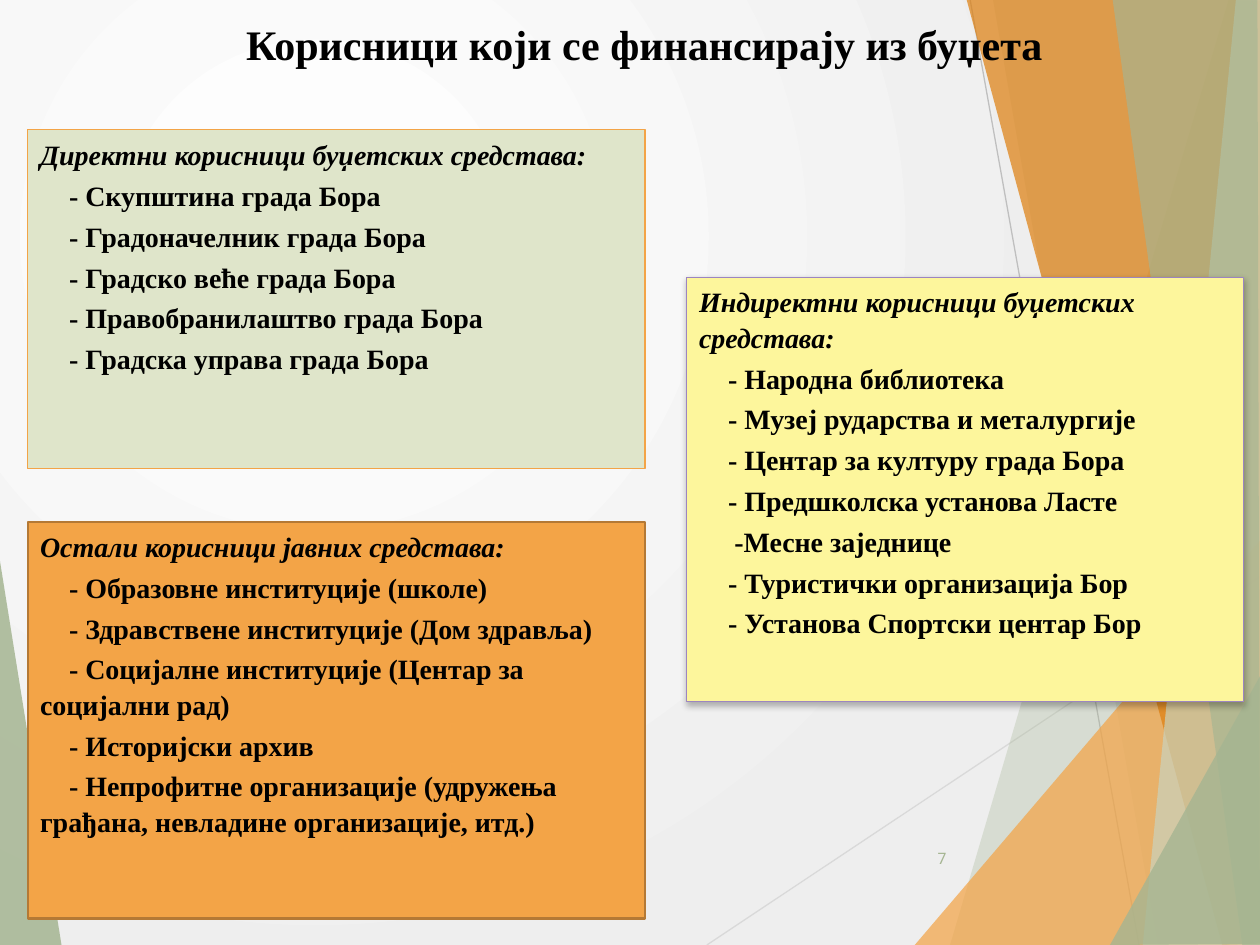
from dataclasses import dataclass

from lxml.etree import SubElement
from pptx import Presentation
from pptx.dml.color import RGBColor as Rgb
from pptx.enum.shapes import MSO_CONNECTOR as Connector, MSO_SHAPE as Shape
from pptx.enum.text import MSO_ANCHOR as Anchor, PP_ALIGN as Align
from pptx.oxml import parse_xml
from pptx.oxml.ns import nsdecls, qn
from pptx.util import Inches, Pt


@dataclass(frozen=True)
class Theme:
    """Colours, fonts and type sizes of the slide."""
    serif: str = "Times New Roman"
    sans: str = "Roboto"
    title_size: float = 24
    body_size: float = 16
    number_size: float = 9
    ink: str = "000000"
    sage: str = "A5B592"
    pale_sage: str = "C9D3BE"
    orange: str = "F3A447"
    deep_orange: str = "DD7E0E"
    brown: str = "B47935"
    light_green: str = "DFE5CA"
    yellow: str = "FDF69C"
    violet: str = "9C85C0"
    light_grey: str = "D9D9D9"
    grey: str = "BFBFBF"
    glow: str = "FFFFFF"
    haze: str = "EEEEEE"


THEME = Theme()

FACETS = [
    ([(-0.01, 4.39), (0.49, 7.51), (-0.01, 7.5)], THEME.sage, 85),
    ([(9.75, 0), (7.54, 7.5), (10.02, 7.51), (10.01, 0.01)], THEME.sage, 30),
    ([(7.88, -0.01), (9.19, 7.5), (10.01, 7.5), (10.01, -0.01)], THEME.sage, 20),
    ([(7.26, 7.5), (10, 4.29), (10.01, 7.5)], THEME.orange, 72),
    ([(7.67, -0.01), (9.7, 7.5), (10.01, 7.49), (10.01, -0.01)], THEME.deep_orange, 70),
    ([(9.81, -0.01), (9.07, 7.5), (10.01, 7.5), (10, -0.01)], THEME.pale_sage, 70),
    ([(8.83, -0.01), (9.86, 7.5), (10, 7.5), (9.98, -0.01)], THEME.sage, 65),
    ([(8.81, 7.5), (10.01, 5.35), (10.01, 7.49)], THEME.sage, 80),
]

RAYS = [
    ((5.61, 7.5), (10.01, 4.57), THEME.light_grey),
    ((7.7, 0), (9.04, 7.5), THEME.grey),
]

DIRECT = ("Директни корисници буџетских средстава:", [
    "- Скупштина града Бора",
    "- Градоначелник града Бора",
    "- Градско веће града Бора",
    "- Правобранилаштво града Бора",
    "- Градска управа града Бора",
])
INDIRECT = ("Индиректни корисници буџетских средстава:", [
    "- Народна библиотека",
    "- Музеј рударства и металургије",
    "- Центар за културу града Бора",
    "- Предшколска установа Ласте",
    "-Месне заједнице",
    "- Туристички организација Бор",
    "- Установа Спортски центар Бор",
])
OTHERS = ("Остали корисници јавних средстава:", [
    "- Образовне институције (школе)",
    "- Здравствене институције (Дом здравља)",
    "- Социјалне институције (Центар за социјални рад)",
    "- Историјски архив",
    "- Непрофитне организације (удружења грађана, невладине организације, итд.)",
])


def apply_format(target, values):
    """Set each named attribute of the target."""
    for name, value in values.items():
        setattr(target, name, value)


def write(paragraph, wording, font, size, colour, **style):
    """Add one formatted run to a paragraph."""
    run = paragraph.add_run()
    run.text = wording
    apply_format(run.font, {"name": font, "size": Pt(size), **style})
    run.font.color.rgb = Rgb.from_string(colour)


def paint_background(slide):
    """Fill the background with an off-centre radial gradient."""
    slide.background.fill.solid()
    solid = slide.background._cSld.find(".//" + qn("a:solidFill"))
    stops = "".join(
        f'<a:gs pos="{position}"><a:srgbClr val="{colour}"/></a:gs>'
        for position, colour in ((0, THEME.glow), (100000, THEME.haze)))
    gradient = parse_xml(
        f'<a:gradFill {nsdecls("a")} rotWithShape="1"><a:gsLst>{stops}</a:gsLst>'
        '<a:path path="circle"><a:fillToRect l="50000" t="50000" r="100000" b="100000"/>'
        '</a:path></a:gradFill>')
    solid.getparent().replace(solid, gradient)


def add_facet(slide, corners, colour, opacity):
    """Draw a translucent polygon without an outline."""
    points = [(Inches(x), Inches(y)) for x, y in corners]
    builder = slide.shapes.build_freeform(*points[0], scale=1.0)
    builder.add_line_segments(points[1:], close=True)
    facet = builder.convert_to_shape()
    facet.shadow.inherit = False
    facet.fill.solid()
    facet.fill.fore_color.rgb = Rgb.from_string(colour)
    facet.line.fill.background()
    tint = facet._element.spPr.find(qn("a:solidFill"))[0]
    SubElement(tint, qn("a:alpha"), val=str(opacity * 1000))


def add_ray(slide, start, end, colour):
    """Draw a thin straight line."""
    ends = [Inches(value) for value in (*start, *end)]
    ray = slide.shapes.add_connector(Connector.STRAIGHT, *ends)
    ray.line.width = Pt(0.75)
    ray.line.color.rgb = Rgb.from_string(colour)
    SubElement(ray._element.spPr, qn("a:effectLst"))


def add_label(slide, place, wording, align, anchor, *look, **style):
    """Add a one-paragraph text box."""
    frame = slide.shapes.add_textbox(*map(Inches, place)).text_frame
    apply_format(frame, {"word_wrap": True, "vertical_anchor": anchor})
    frame.paragraphs[0].alignment = align
    write(frame.paragraphs[0], wording, *look, **style)


def cast_shadow(panel):
    """Give a panel a soft shadow below it."""
    effects = panel._element.spPr.find(qn("a:effectLst"))
    shadow = SubElement(effects, qn("a:outerShdw"), blurRad=str(Pt(4)),
                        dist=str(Pt(2)), dir="5400000", rotWithShape="0")
    tint = SubElement(shadow, qn("a:srgbClr"), val=THEME.ink)
    SubElement(tint, qn("a:alpha"), val="28000")


def add_panel(slide, place, content, fill, outline, width):
    """Draw a box with an italic heading and its indented users."""
    panel = slide.shapes.add_shape(Shape.RECTANGLE, *map(Inches, place))
    panel.shadow.inherit = False
    panel.fill.solid()
    panel.fill.fore_color.rgb = Rgb.from_string(fill)
    panel.line.color.rgb = Rgb.from_string(outline)
    panel.line.width = Pt(width)
    frame = panel.text_frame
    apply_format(frame, {"word_wrap": True, "vertical_anchor": Anchor.TOP})
    heading, users = content
    for index, wording in enumerate([heading, *users]):
        paragraph = frame.add_paragraph() if index else frame.paragraphs[0]
        apply_format(paragraph, {"alignment": Align.LEFT, "space_before": Pt(3.2),
                                 "line_spacing": 1.05})
        if index:
            indent = Inches(0.23 if wording.startswith("- ") else 0.28)
            paragraph._p.get_or_add_pPr().set("indent", str(indent))
        write(paragraph, wording, THEME.serif, THEME.body_size, THEME.ink,
              bold=True, italic=not index)
    return panel


def main():
    """Build the slide and save it."""
    deck = Presentation()
    apply_format(deck, {"slide_width": Inches(10), "slide_height": Inches(7.5)})
    slide = deck.slides.add_slide(deck.slide_layouts[6])
    paint_background(slide)
    add_facet(slide, *FACETS[0])
    for ray in RAYS:
        add_ray(slide, *ray)
    for facet in FACETS[1:]:
        add_facet(slide, *facet)
    add_label(slide, (-0.32, 0.1, 10.87, 0.93), "Корисници који се финансирају из буџета",
              Align.CENTER, Anchor.TOP, THEME.serif, THEME.title_size, THEME.ink, bold=True)
    add_label(slide, (7.05, 6.61, 0.56, 0.4), "7", Align.RIGHT, Anchor.MIDDLE,
              THEME.sans, THEME.number_size, THEME.sage)
    add_panel(slide, (0.22, 1.03, 4.9, 2.69), DIRECT, THEME.light_green, THEME.orange, 0.75)
    indirect = add_panel(slide, (5.45, 2.2, 4.42, 3.37), INDIRECT,
                         THEME.yellow, THEME.violet, 0.75)
    cast_shadow(indirect)
    add_panel(slide, (0.22, 4.14, 4.9, 3.15), OTHERS, THEME.orange, THEME.brown, 1.25)
    deck.save("out.pptx")


if __name__ == "__main__":
    main()
